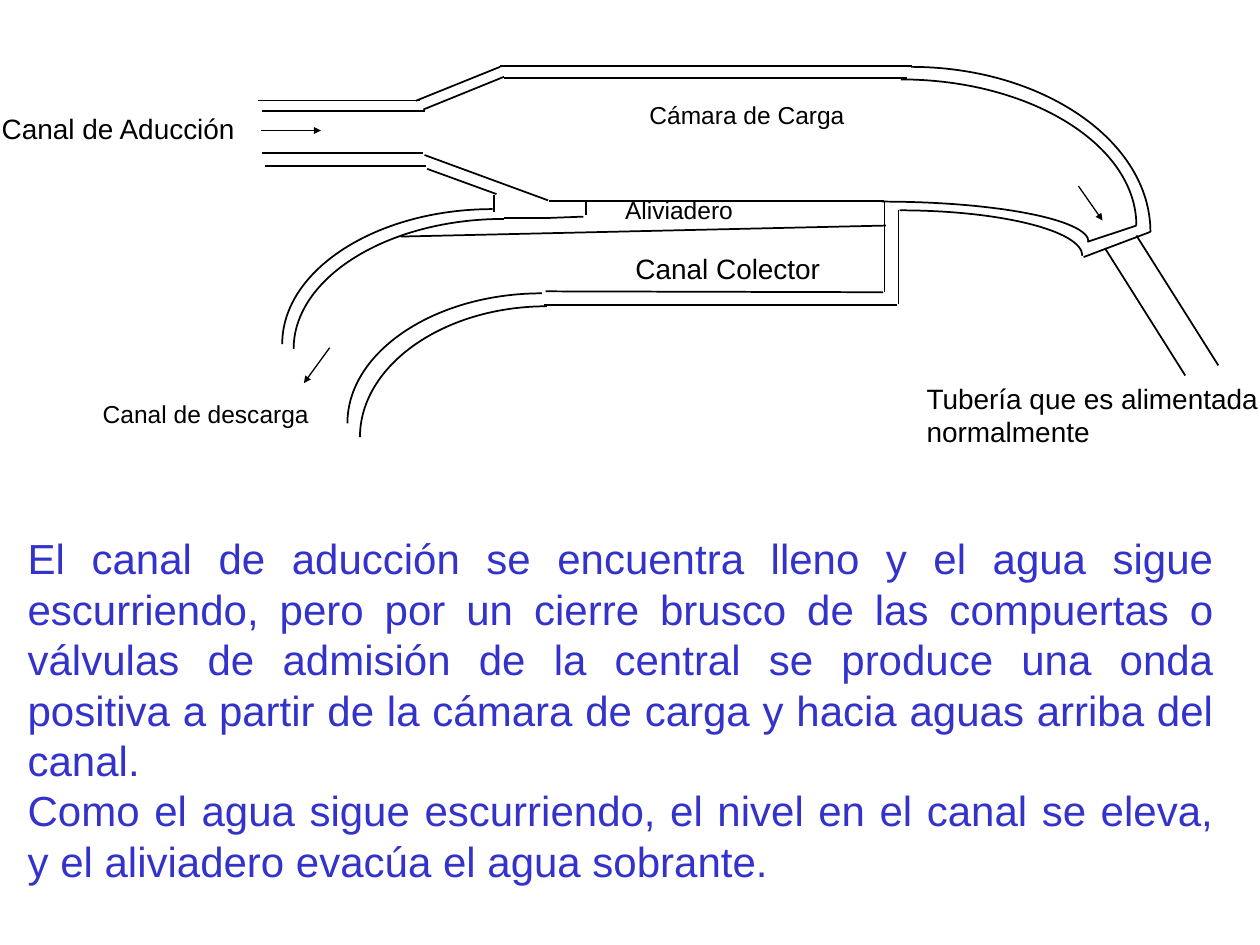
"""Draw the plan of a forebay with its spillway, and explain how it works."""
from dataclasses import dataclass

from lxml import etree
from pptx import Presentation
from pptx import util as u
from pptx.dml.color import RGBColor
from pptx.enum import shapes, text
from pptx.oxml.ns import qn

COLORS = {"ink": "000000", "body": "3333CC"}
FONT = "Arial"
ROUNDNESS = 0.55


@dataclass
class Stroke:
    """A stroke between two points; a curve starts level and ends upright."""
    x1: float
    y1: float
    x2: float
    y2: float
    width: float = 1
    arrow: bool = False


@dataclass
class Label:
    """A caption and its box."""
    words: str
    left: float
    top: float
    width: float
    height: float
    size: float


WALLS = [
    Stroke(237.6, 57.6, 285.8, 38.2),
    Stroke(241.9, 62.6, 288, 43.9),
    Stroke(149.8, 63.4, 242.6, 63.4),
    Stroke(147.6, 57.4, 239.8, 57.4),
    Stroke(288, 44.6, 518.4, 44.6),
    Stroke(285.8, 37.6, 521.3, 37.6),
    Stroke(313.9, 114.7, 505.4, 114.7),
    Stroke(242.6, 88.6, 313.2, 114.5),
    Stroke(151.2, 94.8, 243.4, 94.8),
    Stroke(149.8, 87.6, 241.9, 87.6),
    Stroke(244.1, 96.5, 283.7, 110.9),
    Stroke(282.2, 111.6, 282.2, 121),
    Stroke(288, 124.6, 313.2, 124.6),
    Stroke(312.5, 124.6, 333.4, 123.8),
    Stroke(334.8, 115.2, 334.8, 123.1),
    Stroke(505.4, 115.2, 505.4, 167),
    Stroke(513.4, 120.2, 513.4, 173.5),
    Stroke(504.7, 167, 311.8, 166.5),
    Stroke(311, 174.4, 512.6, 174.4),
    Stroke(229, 135.2, 506.2, 128.9),
    Stroke(621.4, 138.2, 649.4, 128.9),
    Stroke(619.2, 146.9, 657.4, 132.5),
    Stroke(649.4, 134.6, 696.2, 208.8),
    Stroke(631.4, 141.8, 677.3, 214.6),
]
FLOWS = [
    Stroke(149, 74.6, 183.4, 74.6, 0.75, True),
    Stroke(616.3, 106.4, 630, 126, 0.75, True),
    Stroke(188.4, 198.7, 173.7, 218.9, 0.75, True),
]
CURVES = [
    Stroke(514.8, 45.4, 649.4, 128.9),
    Stroke(520.6, 38.2, 657.4, 132.5),
    Stroke(504, 115.2, 622.1, 138.2),
    Stroke(514.1, 120.2, 618.5, 146.2),
    Stroke(281.5, 119.5, 161.3, 196.6),
    Stroke(288, 125.1, 167.8, 199.4),
    Stroke(309.6, 167.6, 198.5, 241.9),
    Stroke(312.5, 175, 205.7, 249.8),
]
LABELS = [
    Label("Canal de Aducción", 0.3, 63, 144, 28.8, 16),
    Label("Cámara de Carga", 370.4, 56.4, 151.2, 25.9, 14),
    Label("Canal Colector", 362.4, 143, 121.7, 19.4, 16),
    Label("Canal de descarga", 58, 227.2, 134.6, 22.3, 14),
    Label("Aliviadero", 356.5, 110.6, 85.7, 20.2, 14),
    Label("Tubería que es alimentada normalmente", 528.8, 217.1, 191.2, 36, 16),
]
BODY = [
    "El canal de aducción se encuentra lleno y el agua sigue escurriendo, "
    "pero por un cierre brusco de las compuertas o válvulas de admisión de la "
    "central se produce una onda positiva a partir de la cámara de carga y "
    "hacia aguas arriba del canal.",
    "Como el agua sigue escurriendo, el nivel en el canal se eleva, y el "
    "aliviadero evacúa el agua sobrante.",
]


def apply(target, values: dict) -> None:
    """Set every attribute named in values."""
    for name, value in values.items():
        setattr(target, name, value)


def add_span(para, words: str, size: float, color: str) -> None:
    """Add formatted words to a paragraph."""
    span = para.add_run()
    span.text = words
    apply(span.font, {"name": FONT, "size": u.Pt(size)})
    span.font.color.rgb = RGBColor.from_string(COLORS[color])


def ink(shape, width: float) -> None:
    """Give a shape a plain dark line."""
    shape.line.color.rgb = RGBColor.from_string(COLORS["ink"])
    shape.line.width = u.Pt(width)


def draw_line(plan, stroke: Stroke) -> None:
    """Draw a straight stroke, with an arrowhead if it has one."""
    ends = [u.Pt(v) for v in (stroke.x1, stroke.y1, stroke.x2, stroke.y2)]
    line = plan.shapes.add_connector(shapes.MSO_CONNECTOR.STRAIGHT, *ends)
    ink(line, stroke.width)
    if stroke.arrow:
        etree.SubElement(line.line._get_or_add_ln(), qn("a:tailEnd"),
                         type="triangle", w="sm", len="sm")
    etree.SubElement(line._element.spPr, qn("a:effectLst"))


def draw_curve(plan, stroke: Stroke) -> None:
    """Draw a quarter of an ellipse as one cubic curve."""
    builder = plan.shapes.build_freeform(u.Pt(stroke.x1), u.Pt(stroke.y1))
    builder.add_line_segments([(u.Pt(stroke.x2), u.Pt(stroke.y2))], close=False)
    curve = builder.convert_to_shape()
    segment = next(curve._element.iter(qn("a:lnTo")))
    start, end = [(int(point.get("x")), int(point.get("y")))
                  for point in curve._element.iter(qn("a:pt"))]
    level = (round(start[0] + ROUNDNESS * (end[0] - start[0])), start[1])
    upright = (end[0], round(end[1] - ROUNDNESS * (end[1] - start[1])))
    bend = etree.Element(qn("a:cubicBezTo"))
    for x, y in (level, upright, end):
        etree.SubElement(bend, qn("a:pt"), x=str(x), y=str(y))
    segment.getparent().replace(segment, bend)
    curve.fill.background()
    curve.shadow.inherit = False
    ink(curve, stroke.width)


def draw_label(plan, label: Label) -> None:
    """Write a caption of the plan."""
    place = (label.left, label.top, label.width, label.height)
    box = plan.shapes.add_textbox(*[u.Pt(v) for v in place])
    sides = ("left", "top", "right", "bottom")
    apply(box.text_frame, {"word_wrap": True,
                           **{f"margin_{side}": u.Pt(0.72) for side in sides}})
    add_span(box.text_frame.paragraphs[0], label.words, label.size, "ink")


def write_body(box) -> None:
    """Fill the body placeholder with justified paragraphs."""
    apply(box, {"left": u.Pt(8.6), "top": u.Pt(299.8),
                "width": u.Pt(692), "height": u.Pt(211)})
    frame = box.text_frame
    apply(frame, {"word_wrap": True, "auto_size": text.MSO_AUTO_SIZE.NONE,
                  "vertical_anchor": text.MSO_ANCHOR.MIDDLE})
    for index, words in enumerate(BODY):
        para = frame.add_paragraph() if index else frame.paragraphs[0]
        apply(para, {"alignment": text.PP_ALIGN.JUSTIFY, "space_before": u.Pt(0),
                     "line_spacing": u.Pt(28.8)})
        props = para._p.get_or_add_pPr()
        props.set("marL", "0")
        props.set("indent", "0")
        etree.SubElement(props, qn("a:buNone"))
        add_span(para, words, 24, "body")


def main() -> None:
    """Build the slide and save it."""
    deck = Presentation()
    apply(deck, {"slide_width": u.Pt(720), "slide_height": u.Pt(540)})
    page = deck.slides.add_slide(deck.slide_layouts[1])
    title = page.shapes.title._element
    title.getparent().remove(title)
    plan = page.shapes.add_group_shape()
    for stroke in WALLS + FLOWS:
        draw_line(plan, stroke)
    for stroke in CURVES:
        draw_curve(plan, stroke)
    for label in LABELS:
        draw_label(plan, label)
    write_body(page.placeholders[1])
    deck.save("out.pptx")


if __name__ == "__main__":
    main()
